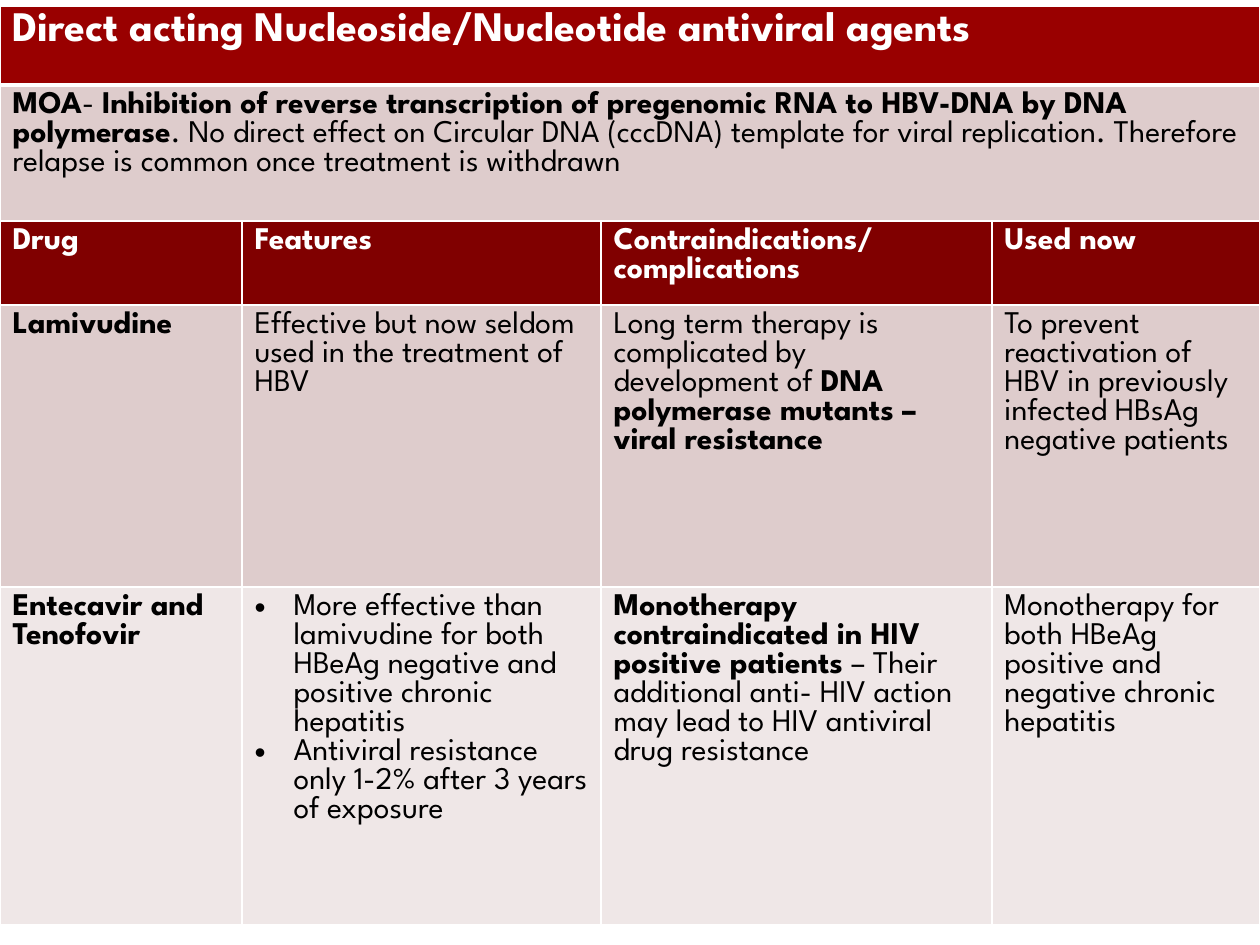
from lxml.etree import SubElement
from pptx import Presentation
from pptx.dml.color import RGBColor
from pptx.oxml.ns import qn
from pptx.util import Pt

SCALE = 914400 // 126
FONT = "League Spartan"
WHITE = RGBColor(0xFF, 0xFF, 0xFF)
BLACK = RGBColor(0, 0, 0)
RED = RGBColor(0x99, 0, 0)
MAROON = RGBColor(0x80, 0, 0)
ROSE = RGBColor(0xDE, 0xCC, 0xCC)
BLUSH = RGBColor(0xEF, 0xE7, 0xE7)

COLS = [242, 359, 391, 268]
ROWS = [
    (79, RED, WHITE, 24, ["*Direct acting Nucleoside/Nucleotide antiviral agents*"]),
    (136, ROSE, BLACK, 18, [
        "*MOA*- *Inhibition of reverse transcription of pregenomic RNA to HBV-DNA "
        "by DNA polymerase*. No direct effect on Circular DNA (cccDNA) template for "
        "viral replication. Therefore relapse is common once treatment is withdrawn"]),
    (84, MAROON, WHITE, 18, [
        "*Drug*", "*Features*", "*Contraindications/complications*", "*Used now*"]),
    (282, ROSE, BLACK, 18, [
        "*Lamivudine*",
        "Effective but now seldom used in the treatment of HBV",
        "Long term therapy is complicated by development of "
        "*DNA polymerase mutants – viral resistance*",
        "To prevent reactivation of HBV in previously infected HBsAg negative patients"]),
    (338, BLUSH, BLACK, 18, [
        "*Entecavir and Tenofovir*",
        "• More effective than lamivudine for both HBeAg negative and positive "
        "chronic hepatitis\n"
        "• Antiviral resistance only 1-2% after 3 years of exposure",
        "*Monotherapy contraindicated in HIV positive patients *"
        "– Their additional anti- HIV action may lead to HIV antiviral drug resistance",
        "Monotherapy for both HBeAg positive and negative chronic hepatitis"]),
]


def px(num):
    return num * SCALE


def style(item, form):
    for name, value in form.items():
        setattr(item, name, value)


def bullet(para):
    props = para._p.get_or_add_pPr()
    props.set("marL", str(px(39)))
    props.set("indent", str(-px(39)))
    SubElement(props, qn("a:buFont"), typeface="Arial")
    SubElement(props, qn("a:buChar"), char="•")


def write(cell, text, color, size):
    frame = cell.text_frame
    for num, line in enumerate(text.split("\n")):
        para = frame.add_paragraph() if num else frame.paragraphs[0]
        if line.startswith("• "):
            bullet(para)
            line = line[2:]
        for part, words in enumerate(line.split("*")):
            if words:
                run = para.add_run()
                run.text = words
                style(run.font, {"name": FONT, "size": Pt(size), "bold": part % 2 == 1})
                run.font.color.rgb = color


def border(cell, widths):
    props = cell._tc.get_or_add_tcPr()
    for side, width in widths.items():
        line = SubElement(props, qn(f"a:ln{side}"), w=str(Pt(width)))
        fill = SubElement(line, qn("a:solidFill"))
        SubElement(fill, qn("a:srgbClr"), val=str(WHITE))


def paint(cell, color):
    cell.fill.solid()
    cell.fill.fore_color.rgb = color


def add_grid(slide):
    heights = [row[0] for row in ROWS]
    grid = slide.shapes.add_table(
        len(ROWS), len(COLS), 0, px(6), px(sum(COLS)), px(sum(heights))).table
    for col, width in zip(grid.columns, COLS):
        col.width = px(width)
    for num, (height, back, color, size, texts) in enumerate(ROWS):
        grid.rows[num].height = px(height)
        widths = {"L": 1, "R": 1, "T": 3 if num == 1 else 1, "B": 3 if num == 0 else 1}
        for cell in grid.rows[num].cells:
            border(cell, widths)
            paint(cell, back)
        if len(texts) == 1:
            grid.cell(num, 0).merge(grid.cell(num, len(COLS) - 1))
        for col, text in enumerate(texts):
            write(grid.cell(num, col), text, color, size)


def main():
    deck = Presentation()
    style(deck, {"slide_width": px(1260), "slide_height": px(945)})
    slide = deck.slides.add_slide(deck.slide_layouts[6])
    add_grid(slide)
    deck.save("out.pptx")


if __name__ == "__main__":
    main()
